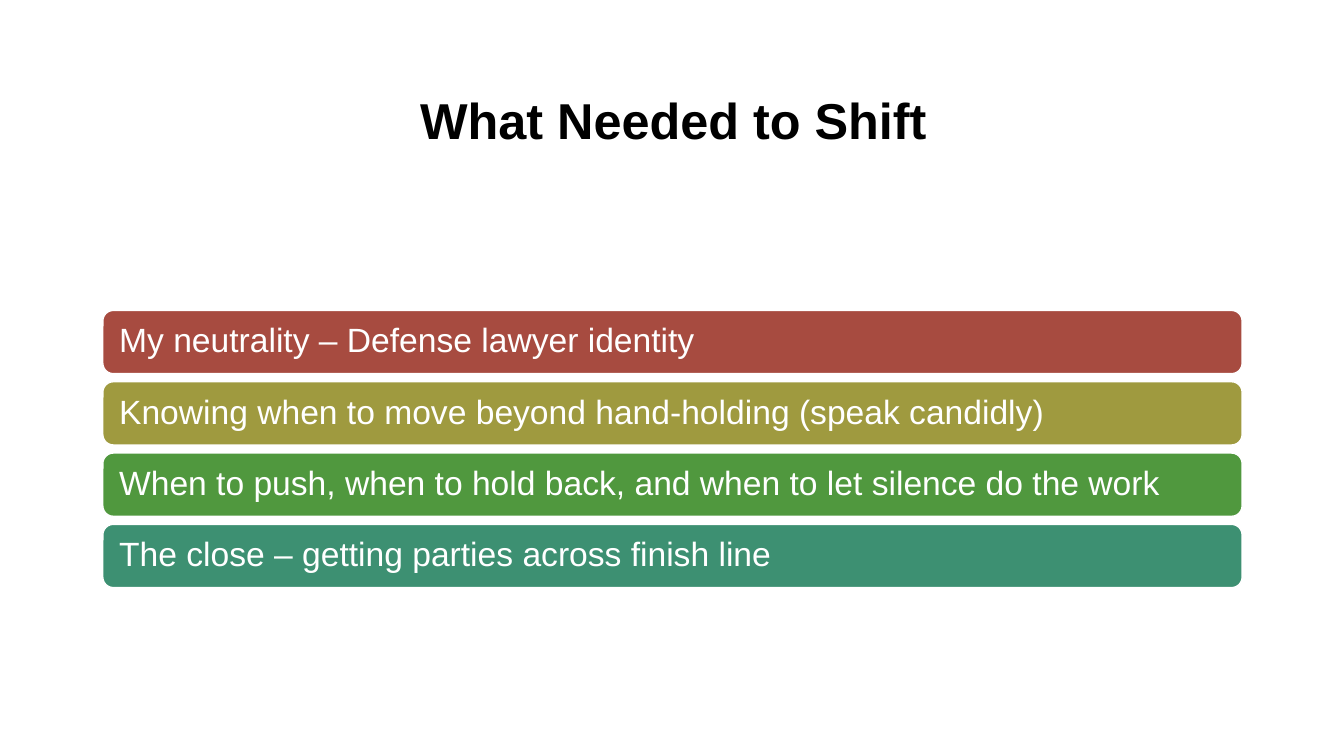
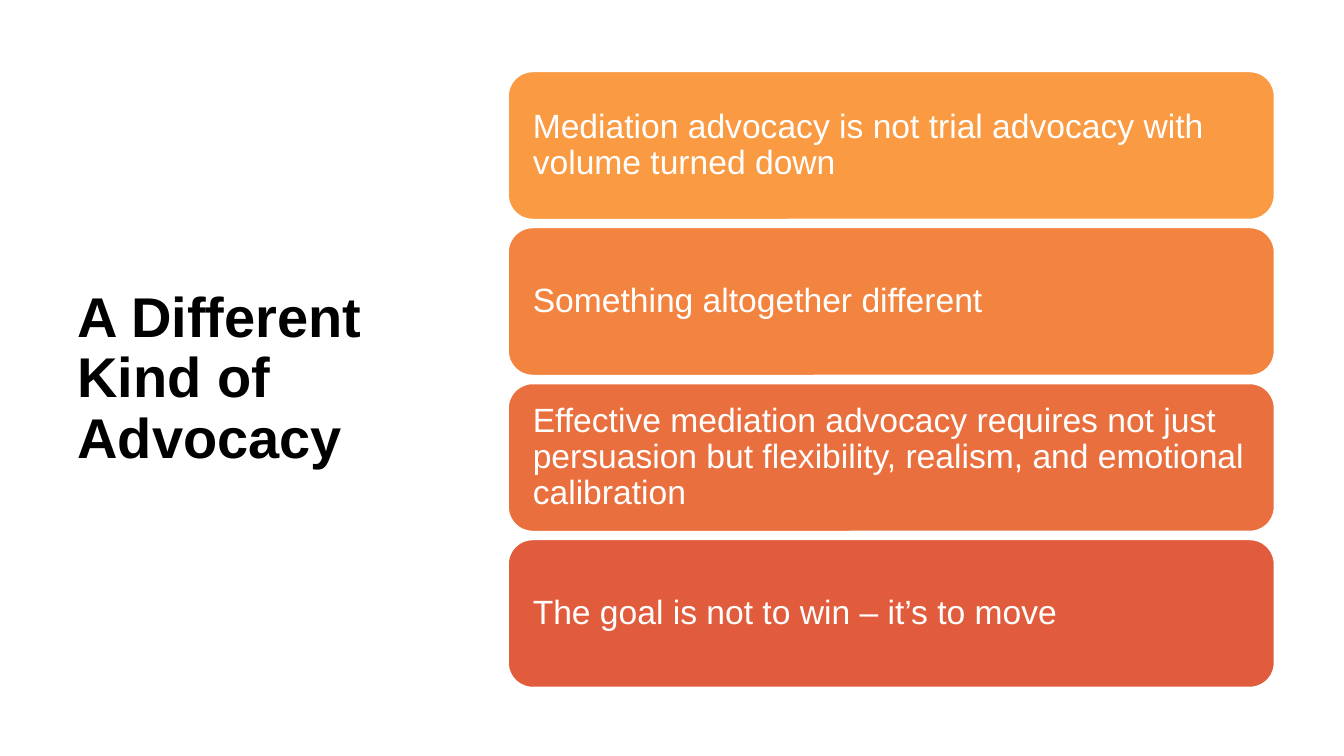
from dataclasses import dataclass

from pptx import Presentation
from pptx.dml.color import RGBColor as Rgb
from pptx.enum.shapes import MSO_SHAPE as Shape
from pptx.enum.text import MSO_ANCHOR as Anchor, PP_ALIGN as Align
from pptx.util import Inches, Pt


@dataclass(frozen=True)
class Theme:
    font: str = "Arial"
    title_color: str = "000000"
    light: str = "FFFFFF"
    shift_colors: tuple = ("A74B40", "9F9A3F", "50983E", "3D9072")
    advocacy_colors: tuple = ("FA9A42", "F28440", "EA6F3E", "E15C3D")
    wide_title_size: int = 36
    side_title_size: int = 40
    body_size: int = 24
    line_spacing: float = 0.9
    outline: int = 1
    bar_gap: float = 0.08
    bar_padding: float = 0.1
    corner_padding: float = 0.05


class Deck:
    """Holds the theme and the current slide, and draws titles and stacked bars."""

    def __init__(self, theme):
        self.theme = theme
        self.presentation = Presentation()
        self.presentation.slide_width = Inches(13.33)
        self.presentation.slide_height = Inches(7.5)
        self.slide = None

    def new_slide(self):
        blank = self.presentation.slide_layouts[6]
        self.slide = self.presentation.slides.add_slide(blank)

    def set_text(self, frame, wording, size, color, bold=False, align=Align.LEFT):
        frame.text = wording
        frame.word_wrap = True
        frame.vertical_anchor = Anchor.MIDDLE
        paragraph = frame.paragraphs[0]
        paragraph.alignment = align
        paragraph.line_spacing = self.theme.line_spacing
        font = paragraph.runs[0].font
        font.name = self.theme.font
        font.size = Pt(size)
        font.bold = bold
        font.color.rgb = Rgb.from_string(color)

    def title(self, wording, area, size, align=Align.LEFT):
        heading = self.slide.shapes.add_textbox(*map(Inches, area))
        self.set_text(heading.text_frame, wording, size, self.theme.title_color, True, align)

    def bar(self, wording, area, color):
        bar = self.slide.shapes.add_shape(Shape.ROUNDED_RECTANGLE, *map(Inches, area))
        bar.shadow.inherit = False
        bar.fill.solid()
        bar.fill.fore_color.rgb = Rgb.from_string(color)
        bar.line.color.rgb = Rgb.from_string(self.theme.light)
        bar.line.width = Pt(self.theme.outline)
        frame = bar.text_frame
        inset = Inches(self.theme.bar_padding + self.theme.corner_padding * area[3])
        frame.margin_left = frame.margin_right = inset
        frame.margin_top = frame.margin_bottom = inset
        self.set_text(frame, wording, self.theme.body_size, self.theme.light)

    def bar_stack(self, points, area, colors):
        left, top, width, height = area
        pitch = (height + self.theme.bar_gap) / len(points)
        for row, (point, color) in enumerate(zip(points, colors)):
            place = (left, top + row * pitch, width, pitch - self.theme.bar_gap)
            self.bar(point, place, color)


def main():
    theme = Theme()
    deck = Deck(theme)

    deck.new_slide()
    deck.title("What Needed to Shift", (1.67, 0.6, 10.02, 1.24),
               theme.wide_title_size, Align.CENTER)
    shifts = (
        "My neutrality – Defense lawyer identity",
        "Knowing when to move beyond hand-holding (speak candidly)",
        "When to push, when to hold back, and when to let silence do the work",
        "The close – getting parties across finish line",
    )
    deck.bar_stack(shifts, (1.02, 3.08, 11.3, 2.75), theme.shift_colors)

    deck.new_slide()
    deck.title("A Different Kind of Advocacy", (0.67, 0.6, 3.82, 6.33),
               theme.side_title_size)
    principles = (
        "Mediation advocacy is not trial advocacy with volume turned down",
        "Something altogether different",
        "Effective mediation advocacy requires not just persuasion but "
        "flexibility, realism, and emotional calibration",
        "The goal is not to win – it’s to move",
    )
    deck.bar_stack(principles, (5.04, 0.71, 7.6, 6.11), theme.advocacy_colors)

    deck.presentation.save("out.pptx")


if __name__ == "__main__":
    main()
